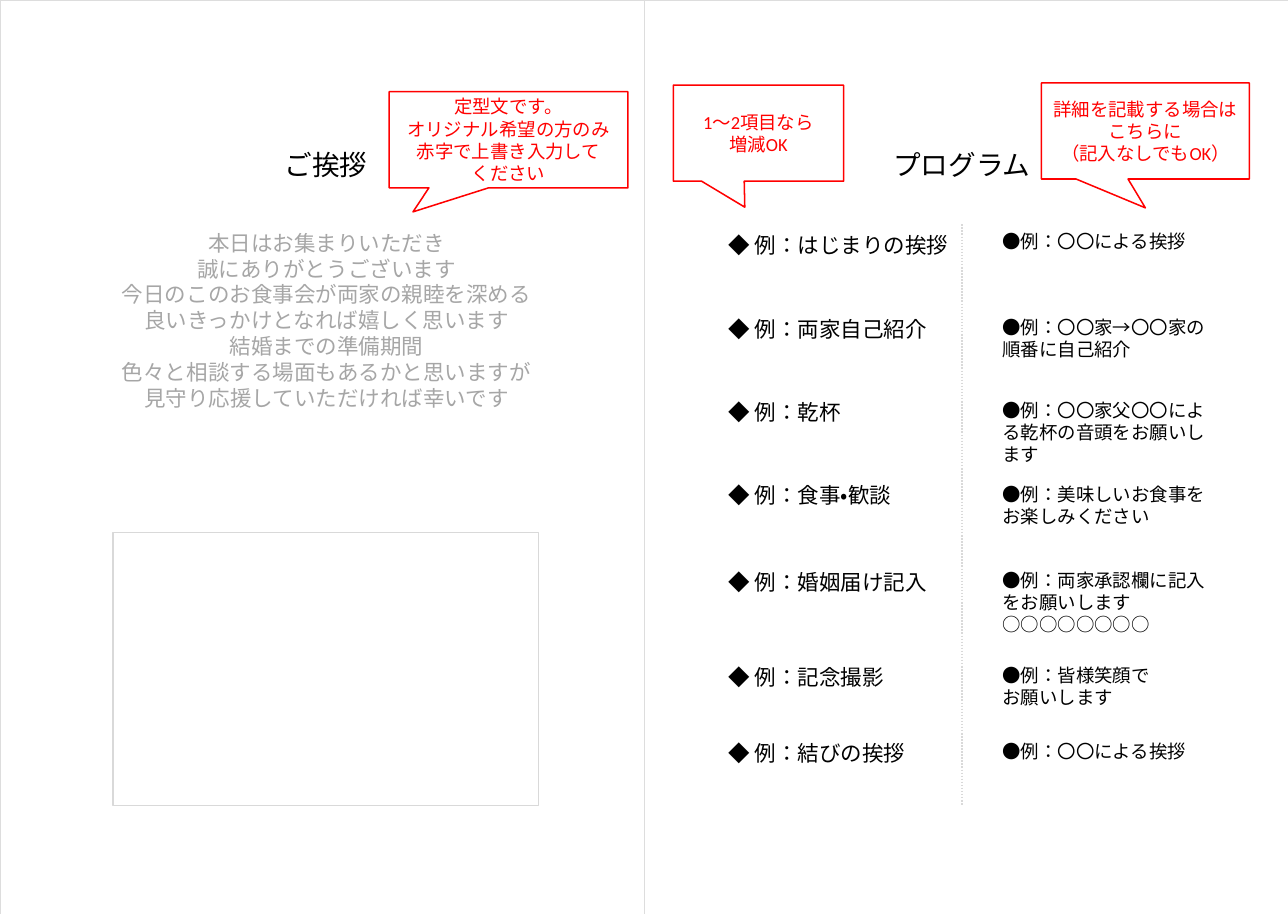
from lxml.etree import SubElement
from pptx import Presentation
from pptx.dml.color import RGBColor
from pptx.enum.dml import MSO_LINE
from pptx.enum.lang import MSO_LANGUAGE_ID
from pptx.enum.shapes import MSO_CONNECTOR, MSO_SHAPE
from pptx.enum.text import MSO_ANCHOR, MSO_AUTO_SIZE, PP_ALIGN
from pptx.oxml.ns import qn
from pptx.util import Inches, Pt

GREETING_TITLE = "ご挨拶"
PROGRAM_TITLE = "プログラム"
GREETING = [
    "本日はお集まりいただき",
    "誠にありがとうございます",
    "今日のこのお食事会が両家の親睦を深める",
    "良いきっかけとなれば嬉しく思います",
    "結婚までの準備期間",
    "色々と相談する場面もあるかと思いますが",
    "見守り応援していただければ幸いです",
]
PROGRAM = [
    (2.05, "はじまりの挨拶", 2.03, ["●例：〇〇による挨拶"]),
    (2.81, "両家自己紹介", 2.81, ["●例：〇〇家→〇〇家の", "順番に自己紹介"]),
    (3.56, "乾杯", 3.56, ["●例：〇〇家父〇〇による乾杯の音頭をお願いします"]),
    (4.31, "食事・歓談", 4.32, ["●例：美味しいお食事を", "お楽しみください"]),
    (5.1, "婚姻届け記入", 5.1, ["●例：両家承認欄に記入をお願いします○○○○○○○○"]),
    (5.96, "記念撮影", 5.96, ["●例：皆様笑顔で", "お願いします"]),
    (6.65, "結びの挨拶", 6.65, ["●例：〇〇による挨拶"]),
]
CALLOUTS = [
    ((3.52, 0.83, 2.16, 0.87), (-0.4, 0.75),
     ["定型文です。", "オリジナル希望の方のみ赤字で上書き入力して", "ください"]),
    ((6.09, 0.77, 1.54, 0.87), (-0.08, 0.77), ["1～2項目なら", "増減OK"]),
    ((9.42, 0.75, 1.88, 0.87), (0, 0.8),
     ["詳細を記載する場合は", "こちらに", "（記入なしでもOK）"]),
]

WIDTH, HEIGHT = 11.65, 8.27
PAGE = WIDTH / 2
TITLE_TOP, TITLE_W, TITLE_H = 1.29, 2.74, 0.4
ITEM_X, ITEM_W, ITEM_H = 6.49, 2.3, 0.34
DETAIL_X, DETAIL_W, DETAIL_H = 8.97, 2.06, 0.71
BODY_TOP, BODY_BOTTOM, DIVIDER_X = 2.03, 7.29, 8.7

HEADING = {"size": Pt(18), "name": "Arial"}
ITEM = {"size": Pt(14), "name": "Arial"}
DETAIL = {"size": Pt(12), "name": "Arial"}
NOTE = {"size": Pt(12), "name": "Calibri"}


def rgb(value):
    return RGBColor.from_string(value)


def place(sp, box):
    sp.left, sp.top, sp.width, sp.height = map(Inches, box)


def write(sp, lines, style, color="000000", align=PP_ALIGN.CENTER, anchor=MSO_ANCHOR.TOP):
    tf = sp.text_frame
    tf.word_wrap = True
    tf.auto_size = MSO_AUTO_SIZE.NONE
    tf.vertical_anchor = anchor
    tf.text = "\n".join(lines)
    for p in tf.paragraphs:
        p.alignment = align
        p.space_before = Pt(0)
        font = p.runs[0].font
        for key, value in style.items():
            setattr(font, key, value)
        font.language_id = MSO_LANGUAGE_ID.JAPANESE
        font.color.rgb = rgb(color)


def add_text(box, lines, style, **options):
    write(slide.shapes.add_textbox(*map(Inches, box)), lines, style, **options)


def add_box(kind, box, line, weight, fill=None):
    sp = slide.shapes.add_shape(kind, *map(Inches, box))
    sp.shadow.inherit = False
    if fill:
        sp.fill.solid()
        sp.fill.fore_color.rgb = rgb(fill)
    else:
        sp.fill.background()
    sp.line.color.rgb = rgb(line)
    sp.line.width = Pt(weight)
    return sp


prs = Presentation()
prs.slide_width, prs.slide_height = Inches(WIDTH), Inches(HEIGHT)
slide = prs.slides.add_slide(prs.slide_layouts[1])

for column in range(2):
    add_box(MSO_SHAPE.RECTANGLE, (column * PAGE, 0, PAGE, HEIGHT), "DDDDDD", 0.25)

title, body = slide.placeholders
place(title, (1.58, TITLE_TOP, TITLE_W, TITLE_H))
write(title, [GREETING_TITLE], HEADING)
place(body, (0.46, BODY_TOP, 4.99, 1.75))
write(body, GREETING, ITEM, "A6A6A6")
for p in body.text_frame.paragraphs:
    pPr = p._p.get_or_add_pPr()
    pPr.set("marL", "0")
    pPr.set("indent", "0")
    SubElement(pPr, qn("a:buNone"))

add_box(MSO_SHAPE.RECTANGLE, (1.02, 4.82, 3.85, 2.47), "D9D9D9", 1)

add_text((7.33, TITLE_TOP, TITLE_W, TITLE_H), [PROGRAM_TITLE], HEADING)
for item_top, item, detail_top, detail in PROGRAM:
    add_text((ITEM_X, item_top, ITEM_W, ITEM_H), [f"◆ 例：{item}"], ITEM, align=PP_ALIGN.LEFT)
    add_text((DETAIL_X, detail_top, DETAIL_W, DETAIL_H), detail, DETAIL, align=PP_ALIGN.LEFT)

divider = slide.shapes.add_connector(
    MSO_CONNECTOR.STRAIGHT, *map(Inches, (DIVIDER_X, BODY_TOP, DIVIDER_X, BODY_BOTTOM)))
divider.line.color.rgb = rgb("D9D9D9")
divider.line.width = Pt(1)
divider.line.dash_style = MSO_LINE.ROUND_DOT
SubElement(divider._element.spPr, qn("a:effectLst"))

for box, tip, lines in CALLOUTS:
    sp = add_box(MSO_SHAPE.RECTANGULAR_CALLOUT, box, "FF0000", 1, "FFFFFF")
    sp.adjustments[0], sp.adjustments[1] = tip
    write(sp, lines, NOTE, "FF0000", anchor=MSO_ANCHOR.MIDDLE)

prs.save("out.pptx")
